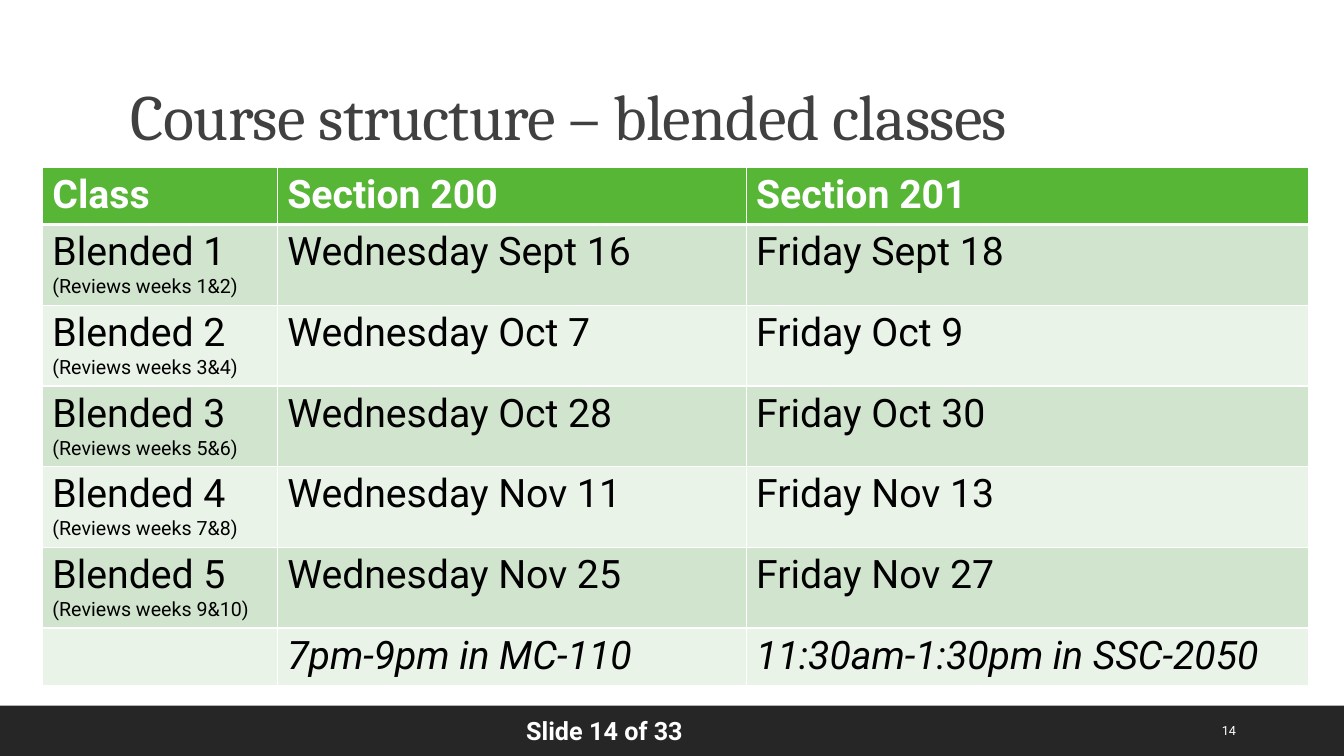
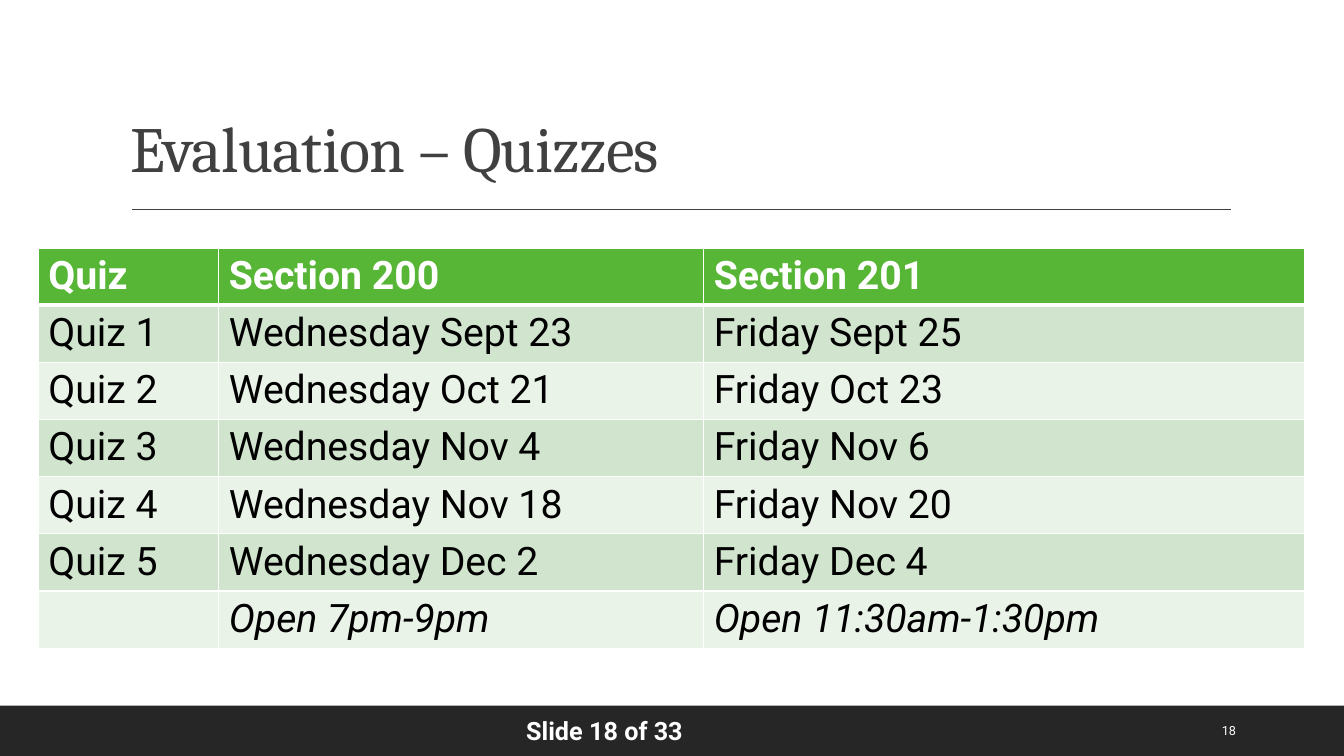
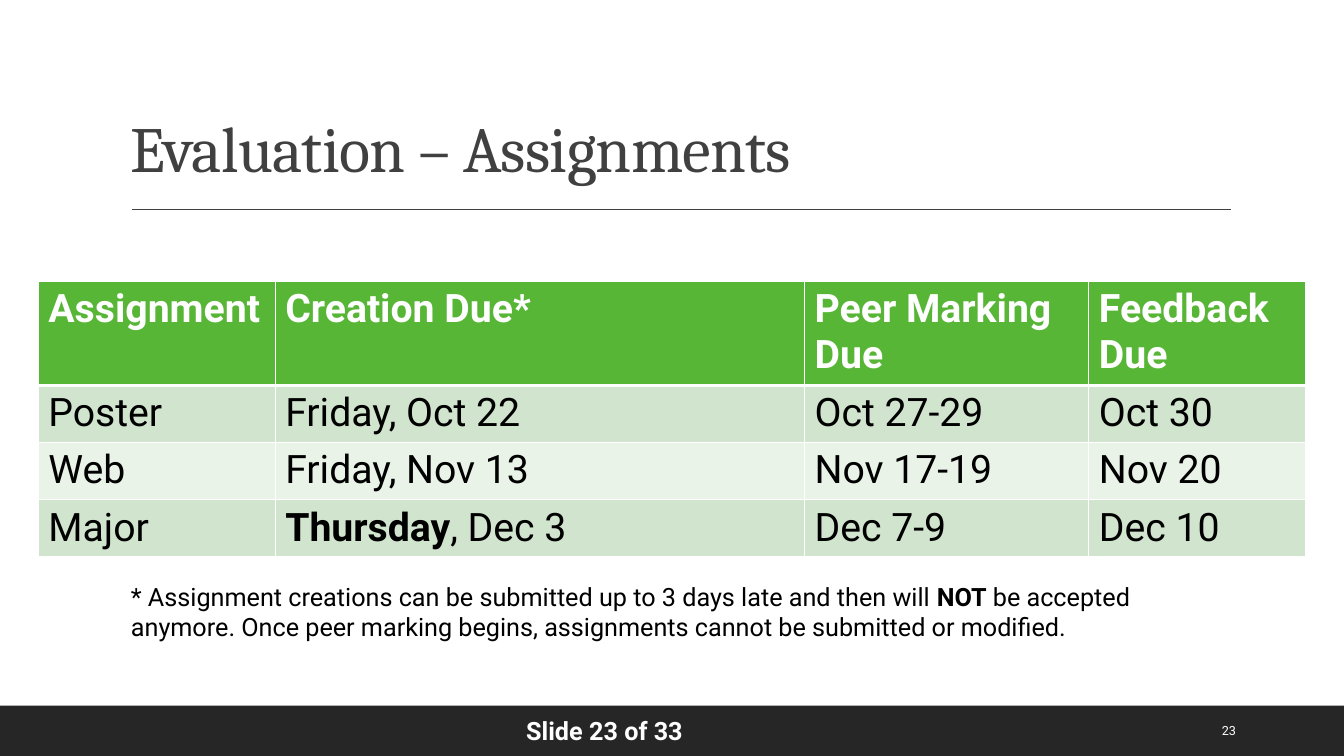
"""Build three course slides: blended classes, quizzes and assignments."""
from lxml.etree import SubElement
from pptx import Presentation
from pptx.dml.color import RGBColor
from pptx.enum.shapes import MSO_CONNECTOR as CONNECTOR, MSO_SHAPE as SHAPE
from pptx.enum.text import MSO_ANCHOR as ANCHOR
from pptx.oxml.ns import qn
from pptx.util import Inches, Pt

WHITE = RGBColor(0xFF, 0xFF, 0xFF)
BLACK = RGBColor(0x00, 0x00, 0x00)
CHARCOAL = RGBColor(0x26, 0x26, 0x26)
GRAY = RGBColor(0x40, 0x40, 0x40)
GREEN = RGBColor(0x57, 0xB6, 0x36)
BANDS = (RGBColor(0xD1, 0xE5, 0xCE), RGBColor(0xEA, 0xF3, 0xE8))

TITLE_FONT, BODY_FONT = "Cambria", "Roboto"
BOLD, ITALIC, SMALL = {"bold": True}, {"italic": True}, {"size": 14}
SLIDE_COUNT = 33
TITLE_TOP, RULE_TOP = 0.31, 2.08
LINE_ROW, NOTED_ROW, HEADER_TWO_LINES = 0.56, 0.78, 1.01


def blended(number, weeks):
    return [[(f"Blended {number}", {})], [(f"(Reviews weeks {weeks})", SMALL)]]


def italic(text):
    return [[(text, ITALIC)]]


SLIDES = [
    {
        "number": 14,
        "title": "Course structure – blended classes",
        "title_bottom": 1.58,
        "rule": False,
        "table_at": (0.42, 1.66),
        "columns": [2.33, 4.65, 5.58],
        "heights": [LINE_ROW] + [NOTED_ROW] * 5 + [LINE_ROW],
        "rows": [
            ("Class", "Section 200", "Section 201"),
            (blended(1, "1&2"), "Wednesday Sept 16", "Friday Sept 18"),
            (blended(2, "3&4"), "Wednesday Oct 7", "Friday Oct 9"),
            (blended(3, "5&6"), "Wednesday Oct 28", "Friday Oct 30"),
            (blended(4, "7&8"), "Wednesday Nov 11", "Friday Nov 13"),
            (blended(5, "9&10"), "Wednesday Nov 25", "Friday Nov 27"),
            ("", italic("7pm-9pm in MC-110"), italic("11:30am-1:30pm in SSC-2050")),
        ],
    },
    {
        "number": 18,
        "title": "Evaluation – Quizzes",
        "title_bottom": 1.9,
        "rule": True,
        "table_at": (0.38, 2.46),
        "columns": [1.79, 4.81, 5.96],
        "heights": [LINE_ROW] * 7,
        "rows": [
            ("Quiz", "Section 200", "Section 201"),
            ("Quiz 1", "Wednesday Sept 23", "Friday Sept 25"),
            ("Quiz 2", "Wednesday Oct 21", "Friday Oct 23"),
            ("Quiz 3", "Wednesday Nov 4", "Friday Nov 6"),
            ("Quiz 4", "Wednesday Nov 18", "Friday Nov 20"),
            ("Quiz 5", "Wednesday Dec 2", "Friday Dec 4"),
            ("", italic("Open 7pm-9pm"), italic("Open 11:30am-1:30pm")),
        ],
    },
    {
        "number": 23,
        "title": "Evaluation – Assignments",
        "title_bottom": 1.9,
        "rule": True,
        "table_at": (0.38, 2.79),
        "columns": [2.35, 5.25, 2.82, 2.15],
        "heights": [HEADER_TWO_LINES] + [LINE_ROW] * 3,
        "rows": [
            ("Assignment", "Creation Due*", "Peer Marking Due", "Feedback Due"),
            ("Poster", "Friday, Oct 22", "Oct 27-29", "Oct 30"),
            ("Web", "Friday, Nov 13", "Nov 17-19", "Nov 20"),
            ("Major", [[("Thursday", BOLD), (", Dec 3", {})]], "Dec 7-9", "Dec 10"),
        ],
        "footnote": [[
            ("* Assignment creations can be submitted up to 3 days late and then will ", {}),
            ("NOT", BOLD),
            (" be accepted anymore. Once peer marking begins, assignments cannot be "
             "submitted or modified.", {}),
        ]],
    },
]


def write(frame, content, size, color, font=BODY_FONT, bold=False, spacing=None):
    """Fill a text frame from a string or from paragraphs of styled runs."""
    if not content:
        return
    paragraphs = [[(content, {})]] if isinstance(content, str) else content
    for index, runs in enumerate(paragraphs):
        paragraph = frame.add_paragraph() if index else frame.paragraphs[0]
        paragraph.line_spacing = spacing
        for text, style in runs:
            run = paragraph.add_run()
            run.text = text
            run.font.name = font
            run.font.size = Pt(style.get("size", size))
            run.font.bold = style.get("bold", bold)
            run.font.italic = style.get("italic", False)
            run.font.color.rgb = color


def add_text(slide, box, content, size, color, anchor=ANCHOR.TOP, **style):
    frame = slide.shapes.add_textbox(*map(Inches, box)).text_frame
    frame.word_wrap = True
    frame.vertical_anchor = anchor
    write(frame, content, size, color, **style)
    return frame


def add_frame(slide, number, title, title_bottom, rule):
    """Add the footer band, the title and the rule that the slides share."""
    band = slide.shapes.add_shape(
        SHAPE.RECTANGLE, 0, Inches(7), Inches(13.33), Inches(0.5))
    band.shadow.inherit = False
    band.fill.solid()
    band.fill.fore_color.rgb = CHARCOAL
    band.line.fill.background()
    if rule:
        line = slide.shapes.add_connector(
            CONNECTOR.STRAIGHT, Inches(1.31), Inches(RULE_TOP),
            Inches(12.21), Inches(RULE_TOP))
        line.line.color.rgb = GRAY
        line.line.width = Pt(1)
        SubElement(line._element.spPr, qn("a:effectLst"))
    add_text(slide, (5.12, 7.05, 2.62, 0.4), f"Slide {number} of {SLIDE_COUNT}",
             18, WHITE, bold=True)
    add_text(slide, (12.02, 7.05, 0.85, 0.4), str(number), 9, WHITE, ANCHOR.MIDDLE)
    heading = add_text(slide, (1.2, TITLE_TOP, 11, title_bottom - TITLE_TOP), title,
                       46, GRAY, ANCHOR.BOTTOM, font=TITLE_FONT, spacing=0.9)
    heading.paragraphs[0].runs[0].font._element.set("spc", "-50")


def add_borders(cell, top, bottom):
    properties = cell._tc.get_or_add_tcPr()
    for side, width in (("L", 1), ("R", 1), ("T", top), ("B", bottom)):
        border = SubElement(properties, qn(f"a:ln{side}"), w=str(Pt(width)))
        fill = SubElement(border, qn("a:solidFill"))
        SubElement(fill, qn("a:srgbClr"), val=str(WHITE))


def add_schedule(slide, at, columns, heights, rows):
    box = (*at, sum(columns), sum(heights))
    table = slide.shapes.add_table(
        len(rows), len(columns), *map(Inches, box)).table
    for column, width in zip(table.columns, columns):
        column.width = Inches(width)
    for r, (height, row) in enumerate(zip(heights, rows)):
        table.rows[r].height = Inches(height)
        header = r == 0
        for c, content in enumerate(row):
            cell = table.cell(r, c)
            add_borders(cell, 3 if r == 1 else 1, 3 if header else 1)
            cell.fill.solid()
            cell.fill.fore_color.rgb = GREEN if header else BANDS[(r - 1) % 2]
            write(cell.text_frame, content, 28, WHITE if header else BLACK, bold=header)


def main():
    deck = Presentation()
    deck.slide_width, deck.slide_height = Inches(13.33), Inches(7.5)
    for page in SLIDES:
        slide = deck.slides.add_slide(deck.slide_layouts[6])
        add_frame(slide, page["number"], page["title"], page["title_bottom"], page["rule"])
        add_schedule(slide, page["table_at"], page["columns"], page["heights"], page["rows"])
        if "footnote" in page:
            add_text(slide, (1.2, 5.72, 10.11, 0.71), page["footnote"], 18, BLACK)
    deck.save("out.pptx")


if __name__ == "__main__":
    main()
